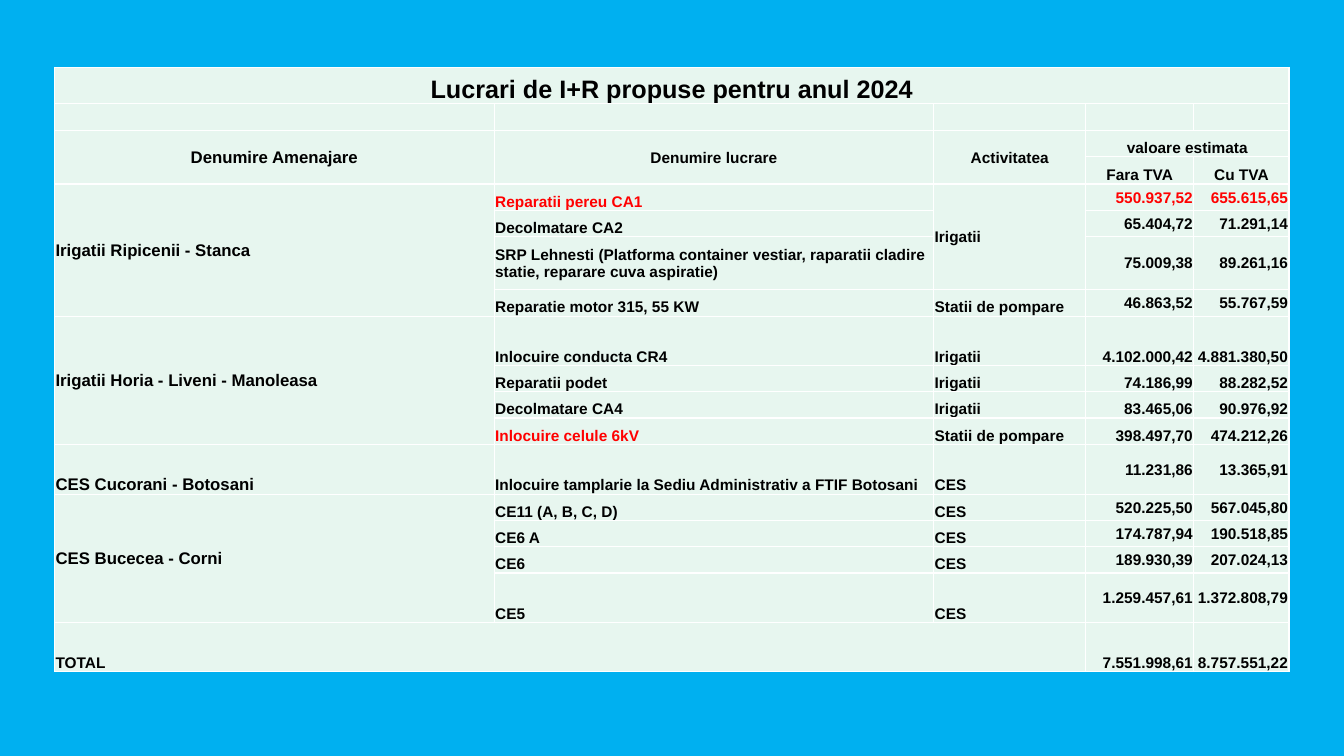
"""Build the slide with the table of irrigation and erosion control works for 2024."""
from pptx import Presentation
from pptx.dml.color import RGBColor
from pptx.enum.text import MSO_ANCHOR, PP_ALIGN
from pptx.util import Pt

MIDDLE, BOTTOM = MSO_ANCHOR.MIDDLE, MSO_ANCHOR.BOTTOM
LEFT, CENTER, RIGHT = PP_ALIGN.LEFT, PP_ALIGN.CENTER, PP_ALIGN.RIGHT
COLORS = {"background": "00B0F0", "cell": "E7F6EF", "text": "000000", "alert": "FF0000"}
COL_WIDTHS = [314, 314, 108.6, 77.2, 68]
ROW_HEIGHTS = [25.9, 19.2, 18.8, 19.4, 18.8, 18.8, 37.6, 19.2, 35.2,
               18.8, 18.8, 19.2, 35.2, 18.8, 18.8, 18.8, 35.2, 35.2]
FIRST_WORK_ROW = 4
MERGES = [(0, 0, 0, 4), (2, 0, 3, 0), (2, 1, 3, 1), (2, 2, 3, 2), (2, 3, 2, 4),
          (4, 0, 7, 0), (4, 2, 6, 2), (8, 0, 11, 0), (13, 0, 16, 0), (17, 0, 17, 2)]
HEADERS = [
    (0, 0, "Lucrari de I+R propuse pentru anul 2024", 18, BOTTOM),
    (2, 0, "Denumire Amenajare", 12, MIDDLE),
    (2, 1, "Denumire lucrare", 11, MIDDLE),
    (2, 2, "Activitatea", 11, MIDDLE),
    (2, 3, "valoare estimata", 11, BOTTOM),
    (3, 3, "Fara TVA", 11, BOTTOM),
    (3, 4, "Cu TVA", 11, BOTTOM),
]
SITES = [
    (4, "Irigatii Ripicenii - Stanca", MIDDLE),
    (8, "Irigatii Horia - Liveni - Manoleasa", MIDDLE),
    (12, "CES Cucorani - Botosani", BOTTOM),
    (13, "CES Bucecea - Corni", MIDDLE),
    (17, "TOTAL", BOTTOM),
]
WORKS = [
    ("Reparatii pereu CA1", "Irigatii", "550.937,52", "655.615,65"),
    ("Decolmatare CA2", "", "65.404,72", "71.291,14"),
    ("SRP Lehnesti (Platforma container vestiar, raparatii cladire statie, "
     "reparare cuva aspiratie)", "", "75.009,38", "89.261,16"),
    ("Reparatie motor 315, 55 KW", "Statii de pompare", "46.863,52", "55.767,59"),
    ("Inlocuire conducta CR4", "Irigatii", "4.102.000,42", "4.881.380,50"),
    ("Reparatii podet", "Irigatii", "74.186,99", "88.282,52"),
    ("Decolmatare CA4", "Irigatii", "83.465,06", "90.976,92"),
    ("Inlocuire celule 6kV", "Statii de pompare", "398.497,70", "474.212,26"),
    ("Inlocuire tamplarie la Sediu Administrativ a FTIF Botosani", "CES",
     "11.231,86", "13.365,91"),
    ("CE11 (A, B, C, D)", "CES", "520.225,50", "567.045,80"),
    ("CE6 A", "CES", "174.787,94", "190.518,85"),
    ("CE6", "CES", "189.930,39", "207.024,13"),
    ("CE5", "CES", "1.259.457,61", "1.372.808,79"),
    ("", "", "7.551.998,61", "8.757.551,22"),
]
BOTTOM_VALUE_ROWS = {8, 9, 10, 11, 17}
MIDDLE_TEXT_CELLS = {(4, 2), (6, 1)}
RED_CELLS = {(4, 1), (4, 3), (4, 4), (11, 1)}


def write_cell(row, col, text, size, align, anchor):
    cell = table.cell(row, col)
    cell.vertical_anchor = anchor
    p = cell.text_frame.paragraphs[0]
    p.text = text
    p.alignment = align
    p.font.name = "Arial"
    p.font.size = Pt(size)
    p.font.bold = True
    color = COLORS["alert" if (row, col) in RED_CELLS else "text"]
    p.font.color.rgb = RGBColor.from_string(color)


prs = Presentation()
prs.slide_width, prs.slide_height = Pt(960), Pt(540)
s = prs.slides.add_slide(prs.slide_layouts[6])
s.background.fill.solid()
s.background.fill.fore_color.rgb = RGBColor.from_string(COLORS["background"])

table = s.shapes.add_table(len(ROW_HEIGHTS), len(COL_WIDTHS), Pt(39), Pt(48.2),
                           Pt(sum(COL_WIDTHS)), Pt(sum(ROW_HEIGHTS))).table
table.first_row = False
table.horz_banding = False
for column, width in zip(table.columns, COL_WIDTHS):
    column.width = Pt(width)
for row, height in zip(table.rows, ROW_HEIGHTS):
    row.height = Pt(height)
for cell in table.iter_cells():
    cell.fill.solid()
    cell.fill.fore_color.rgb = RGBColor.from_string(COLORS["cell"])
    cell.margin_left = cell.margin_right = cell.margin_top = Pt(0.7)
    cell.margin_bottom = 0
    cell.text_frame.paragraphs[0]._p.get_or_add_endParaRPr().set("sz", "1100")
for top, left, bottom, right in MERGES:
    table.cell(top, left).merge(table.cell(bottom, right))

for row, col, text, size, anchor in HEADERS:
    write_cell(row, col, text, size, CENTER, anchor)
for row, text, anchor in SITES:
    write_cell(row, 0, text, 11 if text == "TOTAL" else 12, LEFT, anchor)
for row, work in enumerate(WORKS, FIRST_WORK_ROW):
    for col, text in enumerate(work, 1):
        if not text:
            continue
        is_value = col > 2
        at_bottom = row in BOTTOM_VALUE_ROWS if is_value else (row, col) not in MIDDLE_TEXT_CELLS
        write_cell(row, col, text, 11, RIGHT if is_value else LEFT,
                   BOTTOM if at_bottom else MIDDLE)

prs.save("out.pptx")
